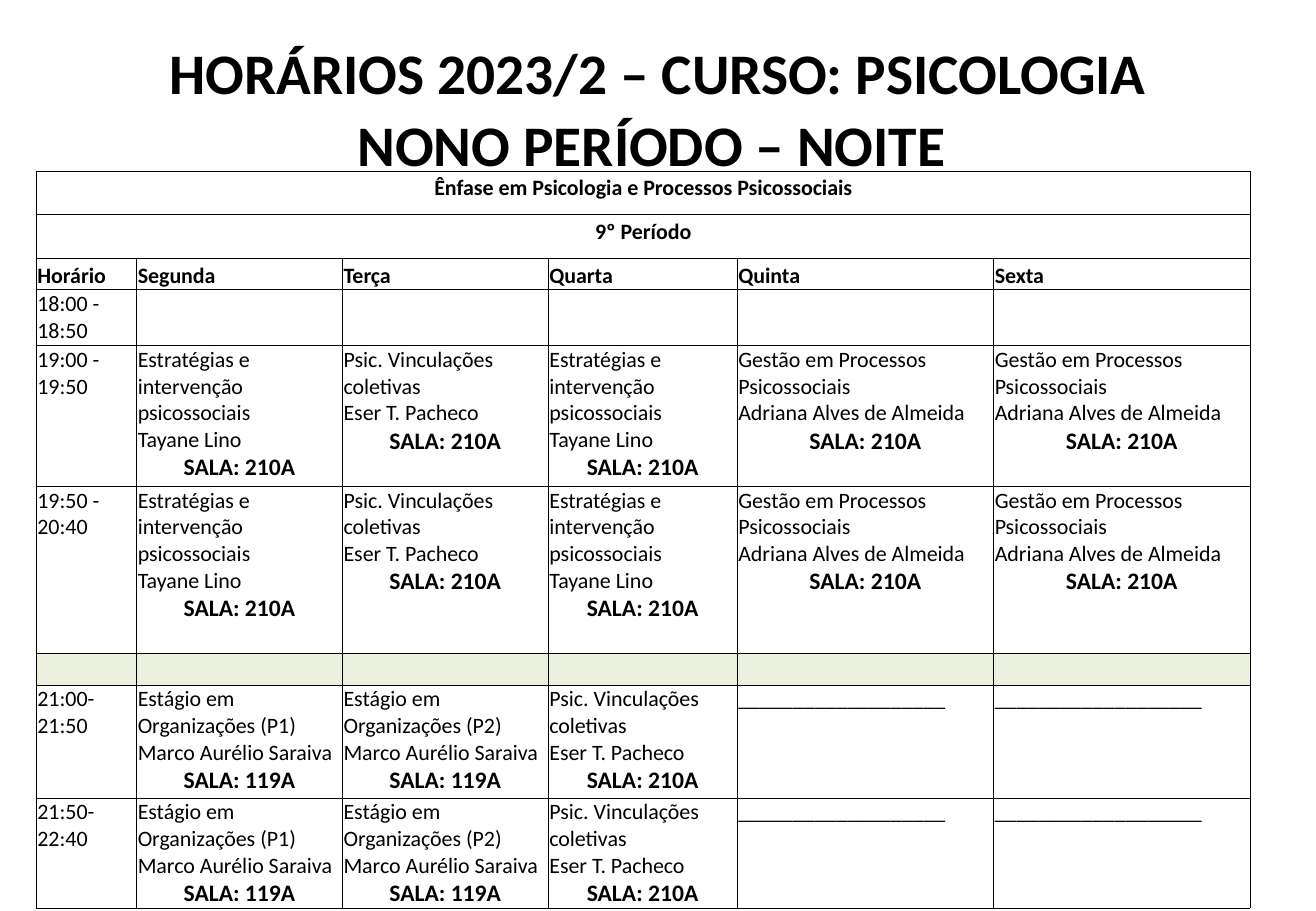
"""Build the evening timetable slide for the ninth Psychology period."""
from lxml.etree import SubElement
from pptx import Presentation
from pptx.dml.color import RGBColor
from pptx.enum.text import MSO_ANCHOR, PP_ALIGN
from pptx.oxml.ns import qn
from pptx.util import Pt

COLORS = {"ink": "000000", "break": "EBF1DE"}

STRATEGIES = ("Estratégias e intervenção psicossociais", "Tayane Lino", "SALA: 210A")
BONDS = ("Psic. Vinculações coletivas", "Eser T. Pacheco", "SALA: 210A")
MANAGEMENT = ("Gestão em Processos Psicossociais", "Adriana Alves de Almeida", "SALA: 210A")
INTERNSHIP_1, INTERNSHIP_2 = (
    (f"Estágio em Organizações ({group})", "Marco Aurélio Saraiva", "SALA: 119A")
    for group in ("P1", "P2"))
FREE = ("_" * 19,)

EARLY = [STRATEGIES, BONDS, STRATEGIES, MANAGEMENT, MANAGEMENT]
LATE = [INTERNSHIP_1, INTERNSHIP_2, BONDS, FREE, FREE]
BANNERS = ["Ênfase em Psicologia e Processos Psicossociais", "9º Período"]
DAYS = ["Horário", "Segunda", "Terça", "Quarta", "Quinta", "Sexta"]
SLOTS = [
    ("18:00 - 18:50", [()] * 5),
    ("19:00 - 19:50", EARLY),
    ("19:50 - 20:40", EARLY),
    ("", [()] * 5),
    ("21:00-21:50", LATE),
    ("21:50-22:40", LATE),
]
COL_WIDTHS = [59.5, 122, 122, 112, 152, 152]
ROW_HEIGHTS = [25.8, 25.8, 18.5, 33.2, 83.5, 99, 18.9, 67, 65.2]


class Timetable:
    """Hold the slide style and draw each kind of element."""

    def __init__(self, prs):
        self.font = "Calibri"
        self.size = 13
        self.slide = prs.slides.add_slide(prs.slide_layouts[6])

    def run(self, p, text, size, bold):
        r = p.add_run()
        r.text = text
        r.font.name = self.font
        r.font.size = Pt(size)
        r.font.bold = bold
        r.font.color.rgb = RGBColor.from_string(COLORS["ink"])

    def title(self, lines, left, top, width, height):
        tf = self.slide.shapes.add_textbox(Pt(left), Pt(top), Pt(width), Pt(height)).text_frame
        tf.word_wrap = True
        tf.vertical_anchor = MSO_ANCHOR.MIDDLE
        for i, line in enumerate(lines):
            p = tf.add_paragraph() if i else tf.paragraphs[0]
            p.alignment = PP_ALIGN.CENTER
            p.line_spacing = 0.9
            p.space_after = Pt(6)
            self.run(p, line, 34, True)

    def table(self, left, top, widths, heights):
        frame = self.slide.shapes.add_table(
            len(heights), len(widths), Pt(left), Pt(top), Pt(sum(widths)), Pt(sum(heights)))
        table = frame.table
        table.first_row = table.horz_banding = False
        for col, width in zip(table.columns, widths):
            col.width = Pt(width)
        for row, height in zip(table.rows, heights):
            row.height = Pt(height)
        for cell in table.iter_cells():
            self.border(cell)
            cell.fill.background()
            cell.margin_left = cell.margin_right = cell.margin_top = Pt(0.7)
            cell.margin_bottom = 0
        return table

    def border(self, cell):
        tc_pr = cell._tc.get_or_add_tcPr()
        for side in ("lnL", "lnR", "lnT", "lnB"):
            ln = SubElement(tc_pr, qn(f"a:{side}"), w=str(Pt(0.5)))
            fill = SubElement(ln, qn("a:solidFill"))
            SubElement(fill, qn("a:srgbClr"), val=COLORS["ink"])

    def banner(self, table, row, text):
        cell = table.cell(row, 0)
        cell.merge(table.cell(row, len(table.columns) - 1))
        cell.margin_left = cell.margin_right = Pt(5)
        cell.margin_top = cell.margin_bottom = Pt(2.2)
        p = cell.text_frame.paragraphs[0]
        p.alignment = PP_ALIGN.CENTER
        self.run(p, text, self.size, True)

    def heading(self, cell, text):
        cell.vertical_anchor = MSO_ANCHOR.BOTTOM
        self.run(cell.text_frame.paragraphs[0], text, self.size, True)

    def lesson(self, cell, subject, teacher="", room=""):
        p = cell.text_frame.paragraphs[0]
        self.run(p, subject, self.size, False)
        if teacher:
            p.add_line_break()
            self.run(p, teacher, self.size, False)
        if room:
            p = cell.text_frame.add_paragraph()
            p.alignment = PP_ALIGN.CENTER
            self.run(p, room, 14, True)

    def blank(self, cell, color=None):
        p = cell.text_frame.paragraphs[0]
        SubElement(p._p, qn("a:endParaRPr"), sz=str(self.size * 100))
        if color:
            cell.fill.solid()
            cell.fill.fore_color.rgb = RGBColor.from_string(COLORS[color])


def main():
    prs = Presentation()
    prs.slide_width, prs.slide_height = Pt(780), Pt(540)
    s = Timetable(prs)
    s.title(["HORÁRIOS 2023/2 – CURSO: PSICOLOGIA", "NONO PERÍODO – NOITE "], 39, 21.6, 702, 90)
    table = s.table(21.5, 101.4, COL_WIDTHS, ROW_HEIGHTS)
    for row, text in enumerate(BANNERS):
        s.banner(table, row, text)
    for col, day in enumerate(DAYS):
        s.heading(table.cell(len(BANNERS), col), day)
    for row, (time, lessons) in enumerate(SLOTS, len(BANNERS) + 1):
        entries = [(time,) if time else (), *lessons]
        for col, entry in enumerate(entries):
            cell = table.cell(row, col)
            if entry:
                s.lesson(cell, *entry)
            else:
                s.blank(cell, None if time else "break")
    prs.save("out.pptx")


if __name__ == "__main__":
    main()
